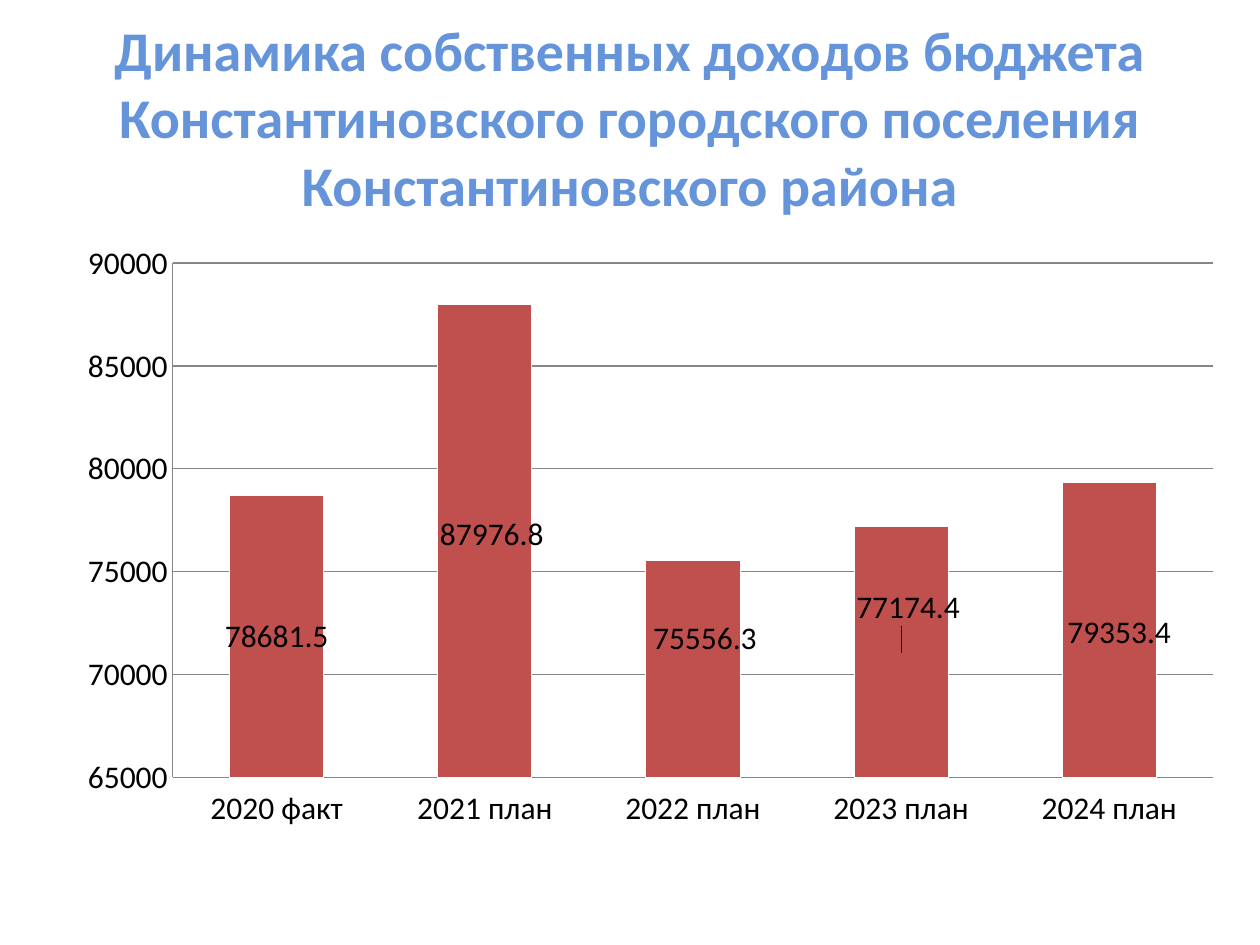
from lxml import etree
from pptx import Presentation
from pptx import util as u
from pptx.chart.data import CategoryChartData
from pptx.dml.color import RGBColor
from pptx.enum import chart as charts, text
from pptx.oxml.ns import qn

TITLE = "Динамика собственных доходов бюджета Константиновского городского поселения Константиновского района"
INCOME = [
    ("2020 факт", 78681.5, (0, 0)),
    ("2021 план", 87976.8, (7, -7)),
    ("2022 план", 75556.3, (12, -30)),
    ("2023 план", 77174.4, (7, -45)),
    ("2024 план", 79353.4, (10, 3)),
]
TITLE_BOX = (63, 38, 1134, 157)
CHART_BOX = (44, 244, 1170, 635)
PLOT = {"x": 0.11, "y": 0.03, "w": 0.89, "h": 0.81}
THEME = {
    "font": "Calibri", "title_size": 32, "chart_size": 18,
    "title": "6594DA", "text": "000000", "bar": "C0504D",
    "edge": "FFFFFF", "grid": "868686",
}
EMU_PER_PX = 914400 / 126


def px(value):
    return u.Emu(round(value * EMU_PER_PX))


def color(name):
    return RGBColor.from_string(THEME[name])


def style_font(font, size, ink, bold=False):
    font.name = THEME["font"]
    font.size = u.Pt(THEME[size])
    font.bold = bold
    font.color.rgb = color(ink)


def write(frame, content, size, ink, bold=False, align=text.PP_ALIGN.CENTER):
    frame.word_wrap = True
    frame.vertical_anchor = text.MSO_ANCHOR.MIDDLE
    paragraph = frame.paragraphs[0]
    paragraph.alignment = align
    run = paragraph.add_run()
    run.text = content
    style_font(run.font, size, ink, bold)


def manual_layout(values):
    layout = etree.Element(qn("c:layout"))
    manual = etree.SubElement(layout, qn("c:manualLayout"))
    for name, value in values.items():
        etree.SubElement(manual, qn(f"c:{name}")).set("val", str(value))
    return layout


def set_plot_layout(chart):
    plot_area = chart.plots[0]._element.getparent()
    for layout in plot_area.findall(qn("c:layout")):
        plot_area.remove(layout)
    modes = {"layoutTarget": "inner", "xMode": "edge", "yMode": "edge"}
    plot_area.insert(0, manual_layout({**modes, **PLOT}))


def move_label(series, index, dx, dy):
    series.points[index].data_label.position = charts.XL_LABEL_POSITION.CENTER
    label = series._element.find(qn("c:dLbls")).findall(qn("c:dLbl"))[-1]
    offset = {"x": round(dx / CHART_BOX[2], 4), "y": round(dy / CHART_BOX[3], 4)}
    label.find(qn("c:idx")).addnext(manual_layout(offset))


def style_axes(chart):
    value_axis, category_axis = chart.value_axis, chart.category_axis
    value_axis.minimum_scale, value_axis.maximum_scale = 65000, 90000
    value_axis.major_unit = 5000
    value_axis.has_major_gridlines = True
    category_axis.tick_label_position = charts.XL_TICK_LABEL_POSITION.LOW
    for axis in (value_axis, category_axis):
        axis.major_tick_mark = charts.XL_TICK_MARK.NONE
        axis.minor_tick_mark = charts.XL_TICK_MARK.NONE
        style_font(axis.tick_labels.font, "chart_size", "text")
    for item in (value_axis, category_axis, value_axis.major_gridlines):
        item.format.line.color.rgb = color("grid")
        item.format.line.width = u.Pt(0.75)


def add_income_chart(slide):
    data = CategoryChartData(number_format="General")
    data.categories = [year for year, _, _ in INCOME]
    data.add_series("Series 1", [amount for _, amount, _ in INCOME])
    chart = slide.shapes.add_chart(
        charts.XL_CHART_TYPE.COLUMN_STACKED, *map(px, CHART_BOX), data
    ).chart
    chart.has_title = chart.has_legend = False
    style_font(chart.font, "chart_size", "text")
    style_axes(chart)
    set_plot_layout(chart)

    plot = chart.plots[0]
    plot.gap_width, plot.overlap = 121, 100
    plot.vary_by_categories = False
    series = plot.series[0]
    series.format.fill.solid()
    series.format.fill.fore_color.rgb = color("bar")
    series.format.line.color.rgb = color("edge")
    series.data_labels.show_value = True
    style_font(series.data_labels.font, "chart_size", "text")
    for index, (_, _, (dx, dy)) in enumerate(INCOME):
        if dx or dy:
            move_label(series, index, dx, dy)


def main():
    presentation = Presentation()
    presentation.slide_width, presentation.slide_height = u.Inches(10), u.Inches(7.5)
    slide = presentation.slides.add_slide(presentation.slide_layouts.get_by_name("Title Only"))
    title = slide.shapes.title
    title.left, title.top, title.width, title.height = map(px, TITLE_BOX)
    write(title.text_frame, TITLE, "title_size", "title", bold=True)
    add_income_chart(slide)
    presentation.save("out.pptx")


if __name__ == "__main__":
    main()
